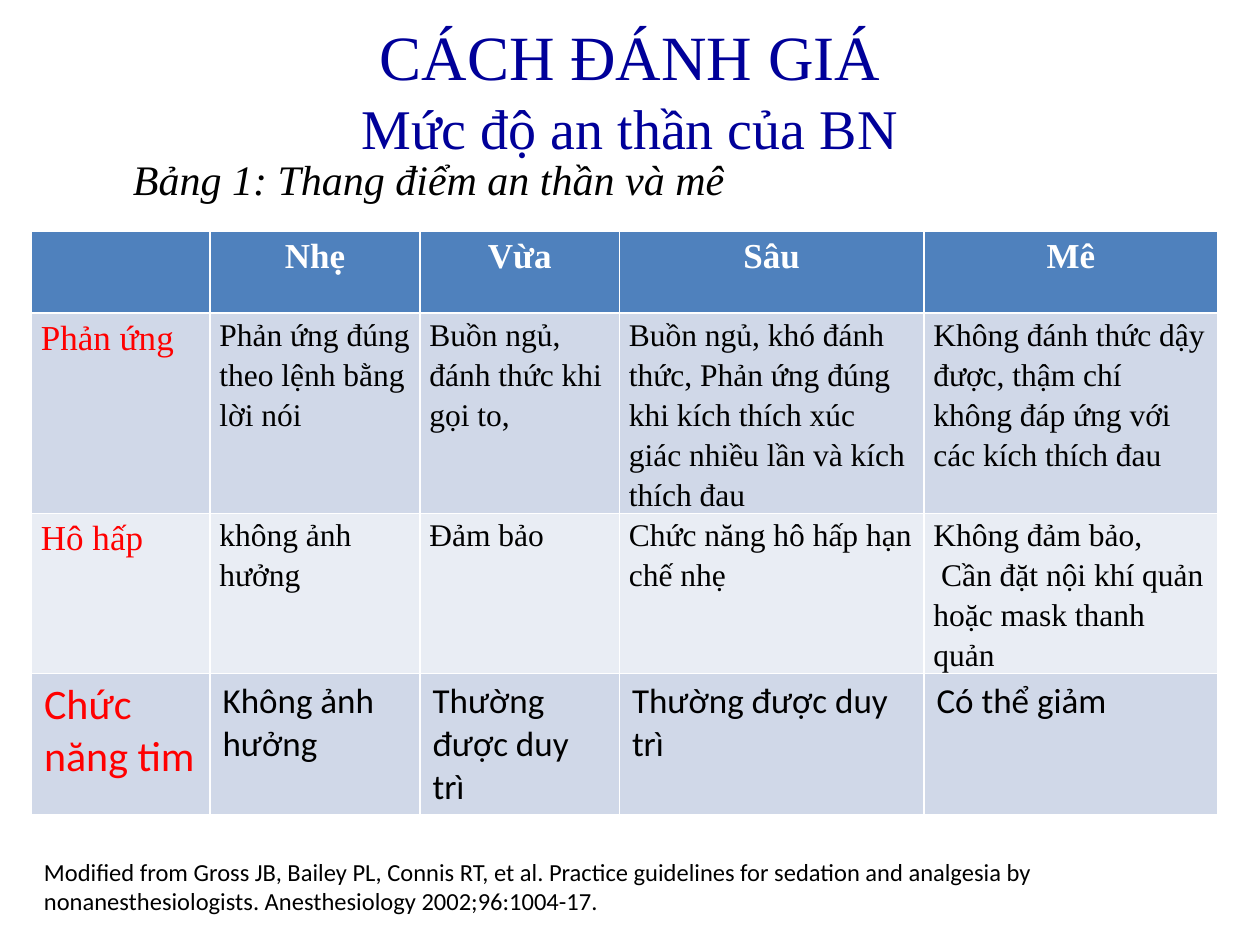
import pptx
import pptx.util
import pptx.dml.color
import pptx.enum.text
import lxml.etree

Pt = pptx.util.Pt
RGB = pptx.dml.color.RGBColor
ALIGN = pptx.enum.text.PP_ALIGN
FIT = pptx.enum.text.MSO_AUTO_SIZE
ROMAN, SANS = "Times New Roman", "Calibri"
HUES = {
    "title": "000099", "text": "000000", "label": "FF0000", "white": "FFFFFF",
    "head": "4F81BD", "odd": "D0D8E8", "even": "E9EDF4",
}


def style(run, hue, **form):
    for key, value in form.items():
        setattr(run.font, key, value)
    run.font.color.rgb = RGB.from_string(HUES[hue])


def write(frame, text, hue, **form):
    frame.word_wrap = True
    for n, line in enumerate(text.split("\n")):
        para = frame.add_paragraph() if n else frame.paragraphs[0]
        run = para.add_run()
        run.text = line
        style(run, hue, **form)


deck = pptx.Presentation()
deck.slide_width, deck.slide_height = Pt(720), Pt(540)
slide = deck.slides.add_slide(deck.slide_layouts[5])

# Title: one paragraph, two lines of different size
title = slide.shapes.title
title.left, title.top, title.width, title.height = Pt(36), Pt(0), Pt(648), Pt(102)
frame = title.text_frame
frame.auto_size = FIT.NONE
para = frame.paragraphs[0]
para.alignment = ALIGN.CENTER
for text, size in (("CÁCH ĐÁNH GIÁ", 36), ("Mức độ an thần của BN", 32)):
    if para.runs:
        para.add_line_break()
        tag = para.runs[0].font._element.tag
        lxml.etree.SubElement(para._p[-1], tag, sz="3600")
    run = para.add_run()
    run.text = text
    style(run, "title", size=Pt(size), name=ROMAN)

# Table of sedation levels
rows = [
    ["", "Nhẹ", "Vừa", "Sâu", "Mê"],
    ["Phản ứng", "Phản ứng đúng theo lệnh bằng lời nói",
     "Buồn ngủ, đánh thức khi gọi to,",
     "Buồn ngủ, khó đánh thức, Phản ứng đúng khi kích thích xúc giác "
     "nhiều lần và kích thích đau",
     "Không đánh thức dậy được, thậm chí không đáp ứng với các kích thích đau"],
    ["Hô hấp", "không ảnh hưởng", "Đảm bảo", "Chức năng hô hấp hạn chế nhẹ",
     "Không đảm bảo,\n Cần đặt nội khí quản hoặc mask thanh quản"],
    ["Chức năng tim", "Không ảnh hưởng", "Thường được duy trì",
     "Thường được duy trì", "Có thể giảm"],
]
widths = [102, 120, 114, 174, 168]
heights = [46.8, 94.4, 72.8, 51.8]
fills = ["head", "odd", "even", "odd"]
# Label size, value size and font of each row
looks = [(20, 20, ROMAN), (20, 18, ROMAN), (20, 18, ROMAN), (24, 20, SANS)]

holder = slide.shapes.add_table(4, 5, Pt(18), Pt(132), Pt(678), Pt(358))
grid = holder.table
for col, width in zip(grid.columns, widths):
    col.width = Pt(width)
for r, row in enumerate(rows):
    grid.rows[r].height = Pt(heights[r])
    first, other, face = looks[r]
    for c, text in enumerate(row):
        cell = grid.cell(r, c)
        cell.fill.solid()
        cell.fill.fore_color.rgb = RGB.from_string(HUES[fills[r]])
        if not text:
            continue
        hue = "white" if r == 0 else "text" if c else "label"
        write(cell.text_frame, text, hue, name=face, bold=r == 0,
              size=Pt(other if c else first))
        if face == SANS:
            continue
        cell.margin_left = cell.margin_right = Pt(5.4)
        cell.margin_top = cell.margin_bottom = Pt(0)
        for para in cell.text_frame.paragraphs:
            para.line_spacing = 1.15
            if r == 0:
                para.alignment = ALIGN.CENTER
            elif c < 3:
                para.space_after = Pt(10)
holder.height = Pt(358)

# Caption and source note
notes = [
    ("Bảng 1: Thang điểm an thần và mê", (36, 84, 654, 36), 40,
     {"size": Pt(24), "name": ROMAN, "italic": True}),
    ("Modified from Gross JB, Bailey PL, Connis RT, et al. Practice guidelines "
     "for sedation and analgesia by nonanesthesiologists. "
     "Anesthesiology 2002;96:1004-17.", (18, 486, 672, 41), 7.2,
     {"size": Pt(14), "name": SANS}),
]
for text, place, inset, form in notes:
    box = slide.shapes.add_textbox(*[Pt(v) for v in place])
    write(box.text_frame, text, "text", **form)
    box.text_frame.margin_left = Pt(inset)
    box.text_frame.auto_size = FIT.SHAPE_TO_FIT_TEXT

deck.save("out.pptx")
